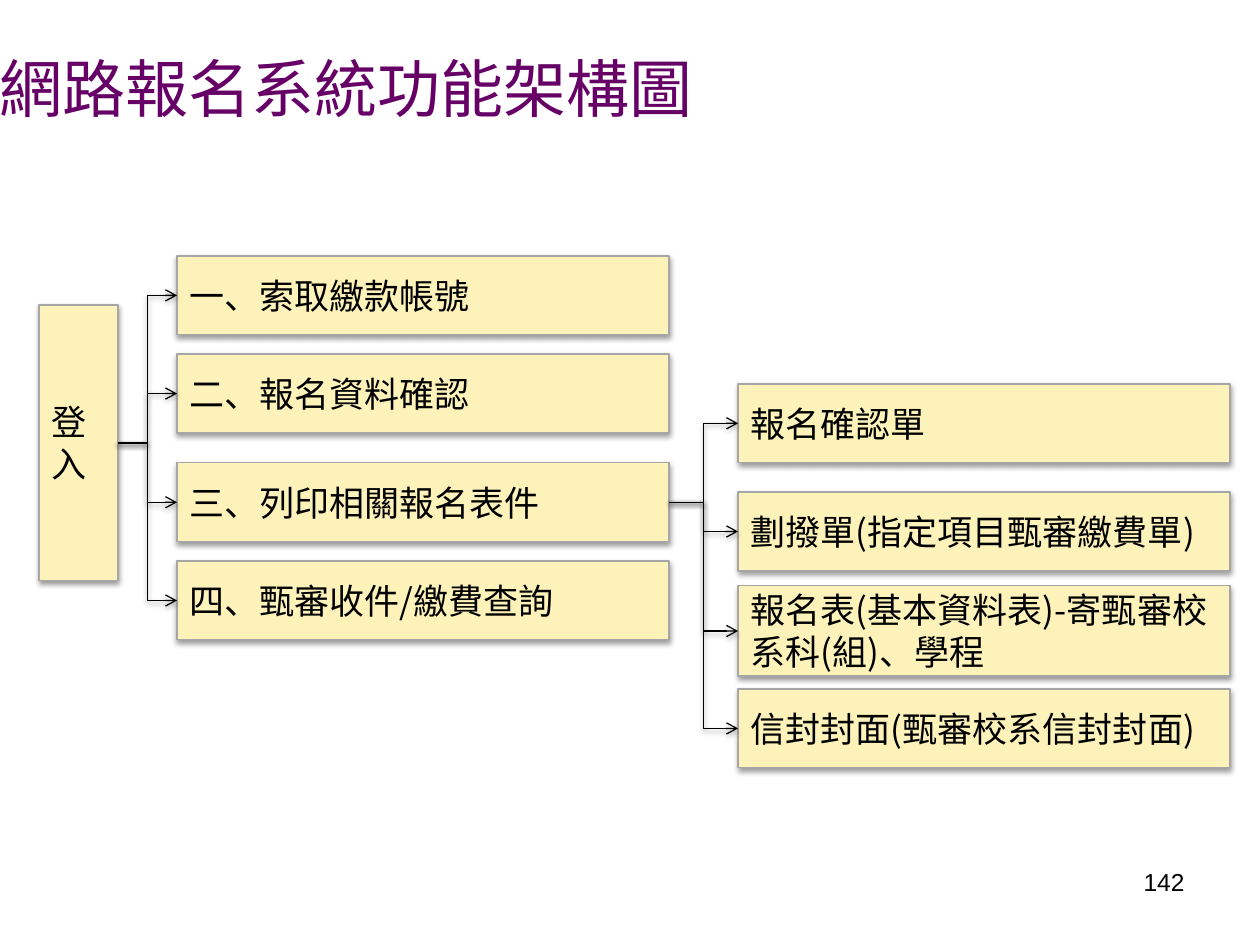
from lxml.etree import SubElement
from pptx import Presentation
from pptx.dml.color import RGBColor
from pptx.enum.shapes import MSO_CONNECTOR, MSO_SHAPE
from pptx.enum.text import MSO_ANCHOR, PP_ALIGN
from pptx.oxml.ns import qn
from pptx.util import Cm, Pt

COLORS = {"title": "660066", "box": "FDF2BA", "border": "A6A6A6", "ink": "000000"}
TITLE_FONT, BODY_FONT, NUMBER_FONT = "Noto Sans CJK JP", "Noto Sans CJK SC", "Arial"
BOX_W, BOX_H = 9.92, 1.59
STEP_X, FORM_X = 3.57, 14.88
STEPS = [
    ("一、索取繳款帳號", 5.16),
    ("二、報名資料確認", 7.14),
    ("三、列印相關報名表件", 9.33),
    ("四、甄審收件/繳費查詢", 11.31),
]
FORMS = [
    ("報名確認單", 7.74, BOX_H),
    ("劃撥單(指定項目甄審繳費單)", 9.92, BOX_H),
    ("報名表(基本資料表)-寄甄審校系科(組)、學程", 11.81, 1.82),
    ("信封封面(甄審校系信封封面)", 13.89, BOX_H),
]


def rgb(name):
    return RGBColor.from_string(COLORS[name])


class Diagram:
    def __init__(self, slide):
        self.slide = slide

    def add_text(self, tf, text, size, font, color="ink", align=PP_ALIGN.LEFT):
        tf.word_wrap = True
        p = tf.paragraphs[0]
        p.alignment = align
        r = p.add_run()
        r.text = text
        r.font.size = Pt(size)
        r.font.color.rgb = rgb(color)
        r.font.name = font
        SubElement(r.font._element, qn("a:ea"), typeface=font)

    def add_shadow(self, sp_pr):
        """Soft drop shadow below; call it after the line is set."""
        effects = SubElement(sp_pr, qn("a:effectLst"))
        shadow = SubElement(effects, qn("a:outerShdw"), blurRad=str(Pt(3.1)),
                            dist=str(Pt(1.6)), dir="5400000", rotWithShape="0")
        color = SubElement(shadow, qn("a:srgbClr"), val=COLORS["ink"])
        SubElement(color, qn("a:alpha"), val="38000")

    def text(self, text, x, y, w, h, size, font, **style):
        tb = self.slide.shapes.add_textbox(Cm(x), Cm(y), Cm(w), Cm(h))
        self.add_text(tb.text_frame, text, size, font, **style)
        return tb.text_frame

    def box(self, text, x, y, w=BOX_W, h=BOX_H):
        sp = self.slide.shapes.add_shape(MSO_SHAPE.RECTANGLE, Cm(x), Cm(y), Cm(w), Cm(h))
        sp.fill.solid()
        sp.fill.fore_color.rgb = rgb("box")
        sp.line.color.rgb = rgb("border")
        sp.line.width = Pt(0.75)
        self.add_shadow(sp._element.spPr)
        sp.text_frame.vertical_anchor = MSO_ANCHOR.MIDDLE
        self.add_text(sp.text_frame, text, 20, BODY_FONT)
        return sp

    def arrow(self, source, target):
        """Elbow arrow from the right side of source to the left side of target."""
        cxn = self.slide.shapes.add_connector(MSO_CONNECTOR.ELBOW, 0, 0, 0, 0)
        cxn.begin_connect(source, 3)
        cxn.end_connect(target, 1)
        cxn.line.color.rgb = rgb("ink")
        cxn.line.width = Pt(0.75)
        SubElement(cxn.line._get_or_add_ln(), qn("a:tailEnd"), type="arrow")
        self.add_shadow(cxn._element.spPr)


def main():
    prs = Presentation()
    prs.slide_width, prs.slide_height = Cm(25.4), Cm(19.05)
    d = Diagram(prs.slides.add_slide(prs.slide_layouts[6]))

    tf = d.text("網路報名系統功能架構圖", 0, 0.79, 25.4, 1.8, 36, TITLE_FONT, color="title")
    tf.vertical_anchor = MSO_ANCHOR.MIDDLE
    tf.margin_left = tf.margin_right = tf.margin_bottom = 0

    login = d.box("登入", 0.79, 6.15, BOX_H, 5.56)
    steps = [d.box(text, STEP_X, y) for text, y in STEPS]
    forms = [d.box(text, FORM_X, y, h=h) for text, y, h in FORMS]
    for source, targets in ((steps[2], forms), (login, steps)):
        for target in targets:
            d.arrow(source, target)

    d.text("142", 18.2, 17.35, 5.93, 1.32, 14, NUMBER_FONT, align=PP_ALIGN.RIGHT)
    prs.save("out.pptx")


if __name__ == "__main__":
    main()
